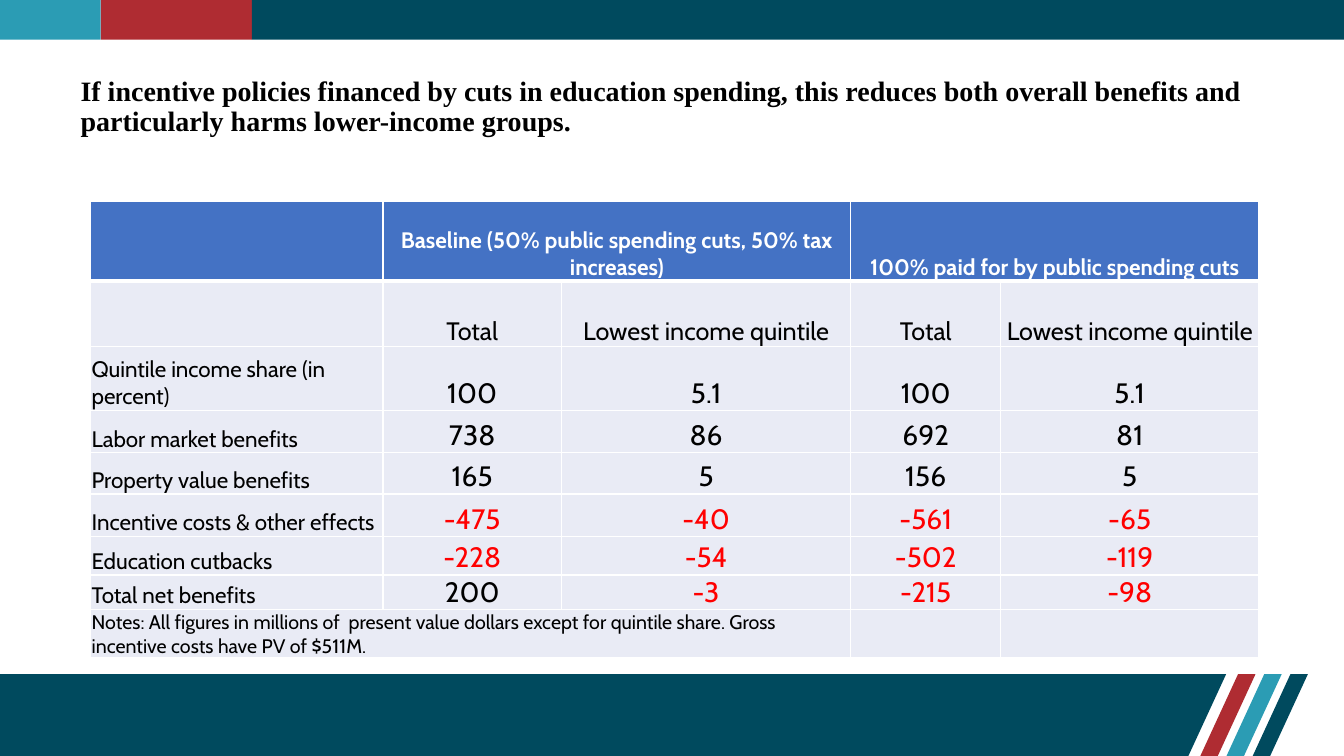
from lxml.etree import SubElement
from pptx import Presentation
from pptx.dml.color import RGBColor
from pptx.enum.shapes import MSO_SHAPE
from pptx.enum.text import MSO_ANCHOR, PP_ALIGN
from pptx.oxml.ns import qn
from pptx.util import Cm, Pt

TEAL, RED, AQUA = "004A5E", "AF2C32", "2B9CB4"
WHITE, BLACK, NEGATIVE = "FFFFFF", "000000", "FF0000"
HEADER_FILL, BODY_FILL = "4472C4", "E9EBF5"

COLUMN_WIDTHS = [7.36, 4.5, 7.29, 3.78, 6.5]
ROW_HEIGHTS = [2.01, 1.65, 1.6, 1.07, 1.04, 1.07, 0.97, 0.84, 1.12]
ROWS = [
    ["", "Baseline (50% public spending cuts, 50% tax increases)", "",
     "100% paid for by public spending cuts", ""],
    ["", "Total", "Lowest income quintile", "Total", "Lowest income quintile"],
    ["Quintile income share (in percent)", "100", "5.1", "100", "5.1"],
    ["Labor market benefits", "738", "86", "692", "81"],
    ["Property value benefits", "165", "5", "156", "5"],
    ["Incentive costs & other effects", "-475", "-40", "-561", "-65"],
    ["Education cutbacks", "-228", "-54", "-502", "-119"],
    ["Total net benefits", "200", "-3", "-215", "-98"],
    ["Notes: All figures in millions of  present value dollars except for "
     "quintile share. Gross incentive costs have PV of $511M.", "", "", "", ""],
]
MERGES = [(0, 1, 2), (0, 3, 4), (8, 0, 2)]


def color(value):
    return RGBColor.from_string(value)


def paint(sp, fill):
    sp.shadow.inherit = False
    sp.fill.solid()
    sp.fill.fore_color.rgb = color(fill)
    sp.line.fill.background()


def style_text(p, size, font, rgb, bold):
    for r in p.runs:
        r.font.size = Pt(size)
        r.font.name = font
        r.font.color.rgb = color(rgb)
        r.font.bold = bold


def add_top_bar(s, left, top, width, height):
    red_left, teal_left = left + 2.54, left + 6.35
    segments = [
        (left, red_left, AQUA),
        (red_left, teal_left, RED),
        (teal_left, left + width, TEAL),
    ]
    for start, end, fill in segments:
        sp = s.shapes.add_shape(MSO_SHAPE.RECTANGLE, Cm(start), Cm(top),
                                Cm(end - start), Cm(height))
        paint(sp, fill)


def add_polygon(s, points, fill):
    start, *others = [(Cm(x), Cm(y)) for x, y in points]
    builder = s.shapes.build_freeform(*start, scale=1.0)
    builder.add_line_segments(others, close=True)
    paint(builder.convert_to_shape(), fill)


def add_footer(s, left, top, width, height):
    lean, stripe_width, step = 0.95, 0.44, 0.66
    bottom = top + height
    band_end = left + width - 3.92
    add_polygon(s, [(left, top), (band_end + lean, top),
                    (band_end, bottom), (left, bottom)], TEAL)
    for i, fill in enumerate([RED, AQUA, TEAL]):
        x = band_end + 0.3 + i * step
        add_polygon(s, [(x + lean, top), (x + lean + stripe_width, top),
                        (x + stripe_width, bottom), (x, bottom)], fill)


def add_title(s, left, top, width, height):
    sp = s.shapes.add_textbox(Cm(left), Cm(top), Cm(width), Cm(height))
    tf = sp.text_frame
    tf.word_wrap = True
    tf.vertical_anchor = MSO_ANCHOR.MIDDLE
    p = tf.paragraphs[0]
    p.text = ("If incentive policies financed by cuts in education spending, this "
              "reduces both overall benefits and particularly harms lower-income groups.")
    p.line_spacing = 0.9
    style_text(p, 20, "Times New Roman", BLACK, True)


def set_borders(cell, bottom_width):
    tc_pr = cell._tc.get_or_add_tcPr()
    for side, width in [("L", 1), ("R", 1), ("T", 1), ("B", bottom_width)]:
        ln = SubElement(tc_pr, qn(f"a:ln{side}"), w=str(Pt(width)))
        fill = SubElement(ln, qn("a:solidFill"))
        SubElement(fill, qn("a:srgbClr"), val=WHITE)


def text_size(row, col):
    if row == 0:
        return 16
    if row == 1:
        return 18
    if row == len(ROWS) - 1:
        return 14
    return 16 if col == 0 else 20


def format_cell(cell, row, col, text):
    header = row == 0
    set_borders(cell, 3 if header else 1)
    cell.fill.solid()
    cell.fill.fore_color.rgb = color(HEADER_FILL if header else BODY_FILL)
    cell.margin_left = cell.margin_right = cell.margin_top = Cm(0.02)
    cell.margin_bottom = 0
    cell.vertical_anchor = MSO_ANCHOR.BOTTOM
    p = cell.text_frame.paragraphs[0]
    p.text = text
    p.alignment = PP_ALIGN.CENTER if col else PP_ALIGN.LEFT
    rgb = WHITE if header else NEGATIVE if text.startswith("-") else BLACK
    style_text(p, text_size(row, col), "Cabin", rgb, header)


def add_benefits_table(s, left, top, width, height):
    frame = s.shapes.add_table(len(ROWS), len(COLUMN_WIDTHS), Cm(left), Cm(top),
                               Cm(width), Cm(height))
    table = frame.table
    table.horz_banding = False
    for column, column_width in zip(table.columns, COLUMN_WIDTHS):
        column.width = Cm(column_width)
    for row, row_height in zip(table.rows, ROW_HEIGHTS):
        row.height = Cm(row_height)
    for row, texts in enumerate(ROWS):
        for col, text in enumerate(texts):
            format_cell(table.cell(row, col), row, col, text)
    for row, first, last in MERGES:
        table.cell(row, first).merge(table.cell(row, last))


def main():
    prs = Presentation()
    prs.slide_width, prs.slide_height = Cm(33.87), Cm(19.05)
    s = prs.slides.add_slide(prs.slide_layouts[6])
    add_footer(s, 0, 16.99, 33.87, 2.06)
    add_top_bar(s, 0, 0, 33.87, 1)
    add_title(s, 1.78, 1.78, 30.48, 1.85)
    add_benefits_table(s, 2.29, 5.08, sum(COLUMN_WIDTHS), sum(ROW_HEIGHTS))
    prs.save("out.pptx")


if __name__ == "__main__":
    main()
